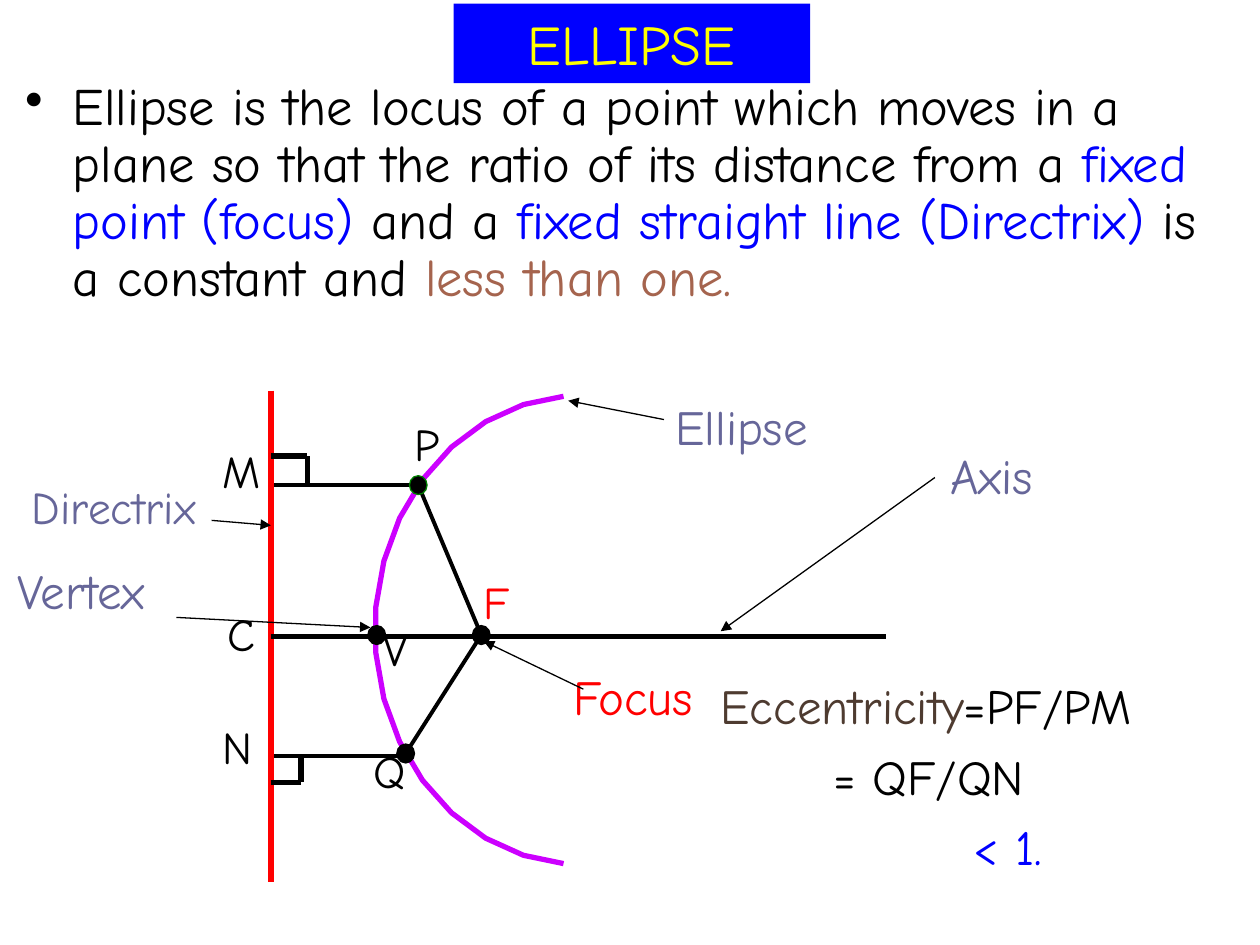
from dataclasses import dataclass
from math import cos, radians, sin
from typing import NamedTuple

from lxml import etree
from pptx import Presentation
from pptx import util as u
from pptx.dml.color import RGBColor
from pptx.enum import shapes, text
from pptx.oxml import ns


@dataclass(frozen=True)
class Theme:
    font: str = "Comic Neue"
    black: str = "000000"
    blue: str = "0000FF"
    red: str = "FF0000"
    yellow: str = "FFFF00"
    green: str = "008000"
    slate: str = "666699"
    sienna: str = "A5644E"
    brown: str = "4E3B30"
    violet: str = "CC00FF"
    title: float = 32
    body: float = 30
    caption: float = 28
    letter: float = 26
    thin: float = 0.75
    medium: float = 2.25
    thick: float = 3


class Point(NamedTuple):
    col: float
    row: float


class Box(NamedTuple):
    col: float
    row: float
    cols: float
    rows: float


class Run(NamedTuple):
    words: str
    color: str


class Line(NamedTuple):
    runs: list[Run]
    indent: float = 0


class Label(NamedTuple):
    words: str
    box: Box
    color: str
    size: float


class Segment(NamedTuple):
    start: Point
    end: Point
    color: str
    width: float
    arrow: bool = False


THEME = Theme()
COLUMNS, ROWS = 100, 75
deck = Presentation()
deck.slide_width, deck.slide_height = u.Inches(10), u.Inches(7.5)
slide = deck.slides.add_slide(deck.slide_layouts[6])


def across(cols: float) -> int:
    return round(deck.slide_width * cols / COLUMNS)


def down(rows: float) -> int:
    return round(deck.slide_height * rows / ROWS)


def place(box: Box) -> tuple[int, int, int, int]:
    return across(box.col), down(box.row), across(box.cols), down(box.rows)


def rgb(color: str) -> RGBColor:
    return RGBColor.from_string(color)


def write(paragraph, runs: list[Run], size: float, align=text.PP_ALIGN.LEFT) -> None:
    paragraph.alignment = align
    paragraph.font.name, paragraph.font.size = THEME.font, u.Pt(size)
    if len({run.color for run in runs}) == 1:
        paragraph.font.color.rgb = rgb(runs[0].color)
    for words, color in runs:
        run = paragraph.add_run()
        run.text = words
        if len(runs) > 1:
            run.font.color.rgb = rgb(color)


def add_text(box: Box, lines: list[Line], size: float, spacing: float = 1,
             align=text.PP_ALIGN.LEFT):
    frame = slide.shapes.add_textbox(*place(box)).text_frame
    frame.word_wrap = True
    for index, line in enumerate(lines):
        paragraph = frame.add_paragraph() if index else frame.paragraphs[0]
        write(paragraph, line.runs, size, align)
        paragraph.line_spacing = spacing
        if line.indent:
            paragraph._p.get_or_add_pPr().set("marL", str(across(line.indent)))
    return frame


def add_bullet(paragraph, hang: float) -> None:
    properties = paragraph._p.get_or_add_pPr()
    properties.set("marL", str(across(hang)))
    properties.set("indent", str(-across(hang)))
    bullet = etree.Element(ns.qn("a:buChar"), char="•")
    properties.insert_element_before(bullet, "a:tabLst", "a:defRPr", "a:extLst")


def add_segment(segment: Segment) -> None:
    (left, top), (right, bottom) = segment.start, segment.end
    link = slide.shapes.add_connector(
        shapes.MSO_CONNECTOR.STRAIGHT, across(left), down(top), across(right), down(bottom))
    link.line.color.rgb = rgb(segment.color)
    link.line.width = u.Pt(segment.width)
    if segment.arrow:
        etree.SubElement(link.line._get_or_add_ln(), ns.qn("a:tailEnd"), type="triangle")
    etree.SubElement(link._element.spPr, ns.qn("a:effectLst"))


def add_dot(center: Point, outline: str) -> None:
    cols, rows = 1.4, 1.5
    box = Box(center.col - cols / 2, center.row - rows / 2, cols, rows)
    dot = slide.shapes.add_shape(shapes.MSO_SHAPE.OVAL, *place(box))
    dot.shadow.inherit = False
    dot.fill.solid()
    dot.fill.fore_color.rgb = rgb(THEME.black)
    dot.line.color.rgb = rgb(outline)
    dot.line.width = u.Pt(THEME.thin)


def add_arc(center: Point, radii: Point, step: float, count: int) -> None:
    angles = [radians(step * (index - (count - 1) / 2)) for index in range(count)]
    start, *rest = [(across(center.col - radii.col * cos(angle)),
                     down(center.row + radii.row * sin(angle))) for angle in angles]
    builder = slide.shapes.build_freeform(*start)
    builder.add_line_segments(rest, close=False)
    arc = builder.convert_to_shape()
    arc.shadow.inherit = False
    arc.fill.background()
    arc.line.color.rgb = rgb(THEME.violet)
    arc.line.width = u.Pt(THEME.thick)


def add_title(words: str, box: Box) -> None:
    banner = slide.shapes.add_shape(shapes.MSO_SHAPE.RECTANGLE, *place(box))
    banner.shadow.inherit = False
    banner.fill.solid()
    banner.fill.fore_color.rgb = rgb(THEME.blue)
    banner.line.fill.background()
    write(banner.text_frame.paragraphs[0], [Run(words, THEME.yellow)], THEME.title,
          text.PP_ALIGN.CENTER)


def main() -> None:
    t = THEME
    directrix = 21.5
    p, f, q, v = Point(33.2, 38.5), Point(38.2, 50.4), Point(32.2, 59.8), Point(29.9, 50.4)
    m, n, c = Point(directrix, 38.5), Point(directrix, 60), Point(directrix, 50.5)
    m_corner, n_corner = Point(24.4, 36.2), Point(23.9, 62.1)

    definition = add_text(Box(1, 5.9, 97.5, 23.5), [Line([
        Run("Ellipse is the locus of a point which moves in a plane so that the ratio"
            " of its distance from a ", t.black),
        Run("fixed point (focus)", t.blue), Run(" and a ", t.black),
        Run("fixed straight line (Directrix)", t.blue),
        Run(" is a constant and ", t.black), Run("less than one.", t.sienna)])], t.body, 0.9)
    add_bullet(definition.paragraphs[0], 3.8)
    add_title("ELLIPSE", Box(36, 0.3, 28.3, 6.3))

    for start, end in ((p, f), (m, p), (f, q), (q._replace(row=n.row), n)):
        add_segment(Segment(start, end, t.black, t.medium))
    add_segment(Segment(Point(directrix, 31), Point(directrix, 70), t.red, t.thick))
    add_segment(Segment(c, Point(70.3, c.row), t.black, t.thick))
    add_arc(Point(46, 50), Point(16.25, 18.6), 11.4, 16)

    for label in (
        Label("M", Box(16.7, 34.7, 3.1, 6.6), t.black, t.letter),
        Label("N", Box(16.7, 56.6, 3.1, 6.6), t.black, t.letter),
        Label("Q", Box(28.6, 58.5, 4.6, 6.6), t.black, t.letter),
        Label("P", Box(31.6, 32.5, 4.6, 6.6), t.black, t.letter),
        Label("C", Box(17.1, 47.6, 3.1, 6.6), t.black, t.letter),
        Label("F", Box(37.4, 45.1, 3.1, 6.6), t.red, t.letter),
        Label("V", Box(29.1, 48.8, 4.6, 6.6), t.black, t.letter),
        Label("Directrix", Box(-0.6, 37.5, 19.3, 6.6), t.slate, t.letter),
        Label("Vertex", Box(-3.8, 44, 20.5, 7.1), t.slate, t.caption),
        Label("Axis", Box(73.2, 34.9, 11, 7.1), t.slate, t.caption),
        Label("Focus", Box(44, 52.4, 12.5, 7.1), t.red, t.caption),
        Label("Ellipse", Box(51.2, 31, 15.3, 7.1), t.slate, t.caption),
    ):
        add_text(label.box, [Line([Run(label.words, label.color)])], label.size,
                 align=text.PP_ALIGN.CENTER)

    for start, end in (
        (Point(14, 49), Point(29.4, 49.8)),
        (Point(16.8, 41.3), Point(directrix, 41.7)),
        (Point(74.2, 37.9), Point(57.2, 50.1)),
        (Point(46.3, 54.7), Point(38.4, 50.9)),
        (Point(52.7, 33.3), Point(45.1, 31.8)),
    ):
        add_segment(Segment(start, end, t.black, t.thin, arrow=True))

    add_text(Box(56.2, 52.2, 44.2, 17.8), [
        Line([Run("Eccentricity", t.brown), Run("=PF/PM", t.black)]),
        Line([Run("= QF/QN", t.black)], 9),
        Line([Run("< 1.", t.blue)], 20.1)], t.caption, 1.2)

    for center, outline in ((f, t.black), (v, t.black), (p, t.green), (q, t.black)):
        add_dot(center, outline)
    for foot, corner in ((m, m_corner), (n, n_corner)):
        add_segment(Segment(Point(directrix, corner.row), corner, t.black, t.thick))
        add_segment(Segment(corner, Point(corner.col, foot.row), t.black, t.thick))

    deck.save("out.pptx")


if __name__ == "__main__":
    main()
